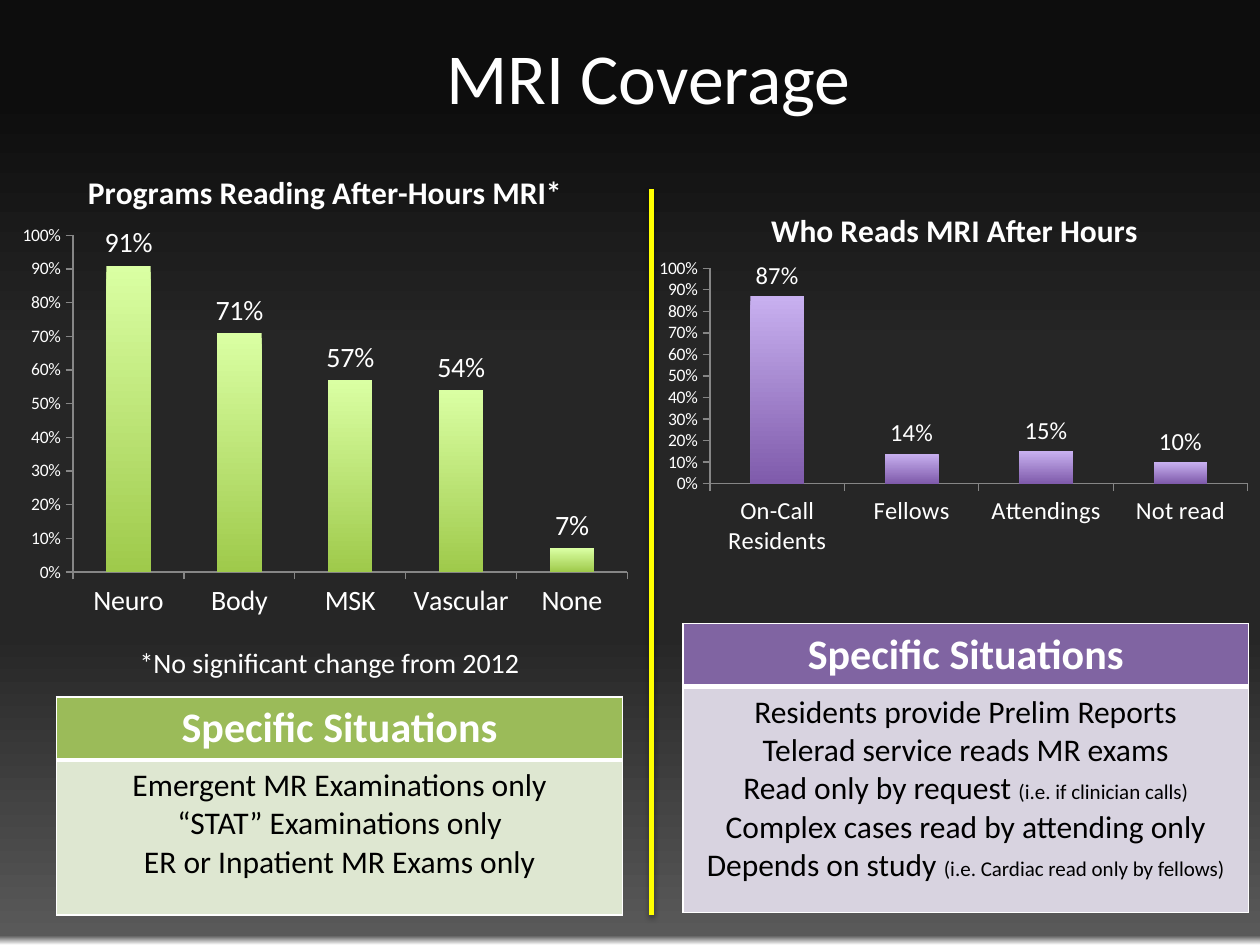
import pptx
import pptx.chart.data
import pptx.dml.color
import pptx.enum.chart
import pptx.enum.shapes
import pptx.enum.text
import pptx.oxml
import pptx.oxml.ns
import pptx.util
from lxml import etree

Inches, Pt = pptx.util.Inches, pptx.util.Pt
CENTER = pptx.enum.text.PP_ALIGN.CENTER
NAMESPACE = pptx.oxml.ns.nsdecls("a")
FONT, WHITE, BLACK, AXIS = "Calibri", "FFFFFF", "000000", "868686"


def color(value):
    return pptx.dml.color.RGBColor.from_string(value)


def inches(box):
    return [Inches(length) for length in box]


def style_font(font, size, value=WHITE, bold=False):
    font.name, font.size, font.bold = FONT, Pt(size), bold
    font.color.rgb = color(value)


def set_gradient(fill, stops):
    """Vertical gradient from (position in percent, colour) pairs, top first."""
    fill.gradient()
    fill.gradient_angle = 270
    for stop, (position, value) in zip(fill.gradient_stops, stops):
        stop.position = position / 100
        stop.color.rgb = color(value)


def add_background(slide):
    stops = [(0, "0D0D0D"), (10, "0D0D0D"), (37, "262626"),
             (67, "262626"), (99, "595959"), (100, WHITE)]
    set_gradient(slide.background.fill, stops[:2])
    stop_list = slide.element.find(".//" + pptx.oxml.ns.qn("a:gsLst"))
    for position, value in stops[2:]:
        stop_list.append(pptx.oxml.parse_xml(
            f'<a:gs {NAMESPACE} pos="{position * 1000}"><a:srgbClr val="{value}"/></a:gs>'))


def add_text(slide, box, text, size):
    text_frame = slide.shapes.add_textbox(*inches(box)).text_frame
    text_frame.word_wrap = True
    text_frame.vertical_anchor = pptx.enum.text.MSO_ANCHOR.MIDDLE
    text_frame.text = text
    paragraph = text_frame.paragraphs[0]
    paragraph.alignment = CENTER
    style_font(paragraph.runs[0].font, size)


def add_divider(slide, x, top, bottom):
    line = slide.shapes.add_connector(
        pptx.enum.shapes.MSO_CONNECTOR.STRAIGHT, *inches((x, top, x, bottom)))
    line.line.color.rgb = color("FFFF00")
    line.line.width = Pt(3)
    # Soft shadow below the line
    line.element.spPr.append(pptx.oxml.parse_xml(
        f'<a:effectLst {NAMESPACE}><a:outerShdw blurRad="{Pt(3.1)}" dist="{Pt(1.6)}" '
        'dir="5400000" rotWithShape="0"><a:srgbClr val="000000"><a:alpha val="38000"/>'
        '</a:srgbClr></a:outerShdw></a:effectLst>'))


def style_axis(axis, size):
    axis.has_major_gridlines = False
    axis.major_tick_mark = pptx.enum.chart.XL_TICK_MARK.OUTSIDE
    axis.format.line.color.rgb = color(AXIS)
    style_font(axis.tick_labels.font, size)


def set_plot_box(chart, shares):
    """Place the plot's inner area by shares of the chart's width and height."""
    plot_area = chart.element.find(".//" + pptx.oxml.ns.qn("c:plotArea"))
    for old in plot_area.findall(pptx.oxml.ns.qn("c:layout")):
        plot_area.remove(old)
    layout = etree.Element(pptx.oxml.ns.qn("c:layout"))
    manual = etree.SubElement(layout, pptx.oxml.ns.qn("c:manualLayout"))
    settings = [("layoutTarget", "inner"), ("xMode", "edge"), ("yMode", "edge")]
    for tag, value in settings + list(zip("xywh", shares)):
        etree.SubElement(manual, pptx.oxml.ns.qn("c:" + tag)).set("val", str(value))
    plot_area.insert(0, layout)


def add_bar_chart(slide, box, plot_box, title, values, size, bar_colors):
    data = pptx.chart.data.CategoryChartData(number_format="0%")
    data.categories = list(values)
    data.add_series("Series 1", list(values.values()))
    chart = slide.shapes.add_chart(
        pptx.enum.chart.XL_CHART_TYPE.COLUMN_CLUSTERED, *inches(box), data).chart
    chart.has_legend = False
    style_font(chart.font, 10)
    chart.has_title = True
    chart.chart_title.include_in_layout = False
    title_frame = chart.chart_title.text_frame
    title_frame.text = title
    style_font(title_frame.paragraphs[0].runs[0].font, 18, bold=True)
    set_plot_box(chart, plot_box)

    # Axes
    style_axis(chart.category_axis, size)
    axis = chart.value_axis
    style_axis(axis, 10)
    axis.minimum_scale, axis.maximum_scale, axis.major_unit = 0, 1, 0.1
    axis.tick_labels.number_format = "0%"
    axis.tick_labels.number_format_is_linked = False

    # Bars and their labels
    plot = chart.plots[0]
    plot.gap_width = 150
    plot.vary_by_categories = False
    set_gradient(plot.series[0].format.fill, list(zip((0, 100), bar_colors)))
    plot.has_data_labels = True
    labels = plot.data_labels
    labels.show_value = True
    labels.position = pptx.enum.chart.XL_LABEL_POSITION.OUTSIDE_END
    labels.number_format, labels.number_format_is_linked = "0%", False
    style_font(labels.font, size)


def style_cell(cell, fill, top, bottom):
    cell.fill.solid()
    cell.fill.fore_color.rgb = color(fill)
    widths = {"lnL": 1, "lnR": 1, "lnT": top, "lnB": bottom}
    properties = cell._tc.get_or_add_tcPr()
    for index, (tag, width) in enumerate(widths.items()):
        properties.insert(index, pptx.oxml.parse_xml(
            f'<a:{tag} {NAMESPACE} w="{Pt(width)}"><a:solidFill>'
            f'<a:srgbClr val="{WHITE}"/></a:solidFill></a:{tag}>'))


def add_situations(slide, box, lines, header_fill, body_fill):
    """Table with a header row and one body cell; each line is (text, small note)."""
    header_height = 0.5
    table = slide.shapes.add_table(2, 1, *inches(box)).table
    table.rows[0].height = Inches(header_height)
    table.rows[1].height = Inches(box[3] - header_height)
    header, body = table.cell(0, 0), table.cell(1, 0)
    style_cell(header, header_fill, 1, 3)
    style_cell(body, body_fill, 3, 1)

    header.text_frame.text = "Specific Situations"
    paragraph = header.text_frame.paragraphs[0]
    paragraph.alignment = CENTER
    style_font(paragraph.runs[0].font, 24, bold=True)

    body.text_frame.text = "\n".join(text for text, note in lines)
    for paragraph, (text, note) in zip(body.text_frame.paragraphs, lines):
        paragraph.alignment = CENTER
        style_font(paragraph.runs[0].font, 18, BLACK)
        if note:
            run = paragraph.add_run()
            run.text = note
            style_font(run.font, 12, BLACK)


def main():
    presentation = pptx.Presentation()
    presentation.slide_width, presentation.slide_height = Inches(10), Inches(7.5)
    slide = presentation.slides.add_slide(presentation.slide_layouts[6])
    add_background(slide)
    add_text(slide, (0.65, 0.16, 9, 0.89), "MRI Coverage", 41)

    # Situation tables
    add_situations(slide, (0.45, 5.53, 4.49, 1.73), [
        ("Emergent MR Examinations only", ""),
        ("“STAT” Examinations only", ""),
        ("ER or Inpatient MR Exams only", "")], "9BBB59", "DEE7D1")
    add_situations(slide, (5.42, 4.95, 4.49, 2.29), [
        ("Residents provide Prelim Reports", ""),
        ("Telerad service reads MR exams", ""),
        ("Read only by request ", "(i.e. if clinician calls)"),
        ("Complex cases read by attending only", ""),
        ("Depends on study ", "(i.e. Cardiac read only by fellows)")], "8064A2", "D8D3E0")

    add_divider(slide, 5.17, 1.5, 7.26)

    # Charts
    add_bar_chart(slide, (0.08, 1.18, 5, 3.82), (0.1, 0.18, 0.88, 0.7),
                  "Programs Reading After-Hours MRI*",
                  {"Neuro": 0.91, "Body": 0.71, "MSK": 0.57, "Vascular": 0.54, "None": 0.07},
                  16, ("DAFFA3", "9FCA4B"))
    add_bar_chart(slide, (5.15, 1.5, 4.85, 3), (0.1, 0.21, 0.88, 0.57),
                  "Who Reads MRI After Hours",
                  {"On-Call Residents": 0.87, "Fellows": 0.14, "Attendings": 0.15,
                   "Not read": 0.1},
                  14, ("C8B0F0", "7F5BAB"))
    add_text(slide, (0.77, 5.07, 3.69, 0.37), "*No significant change from 2012", 16)

    presentation.save("out.pptx")


if __name__ == "__main__":
    main()
